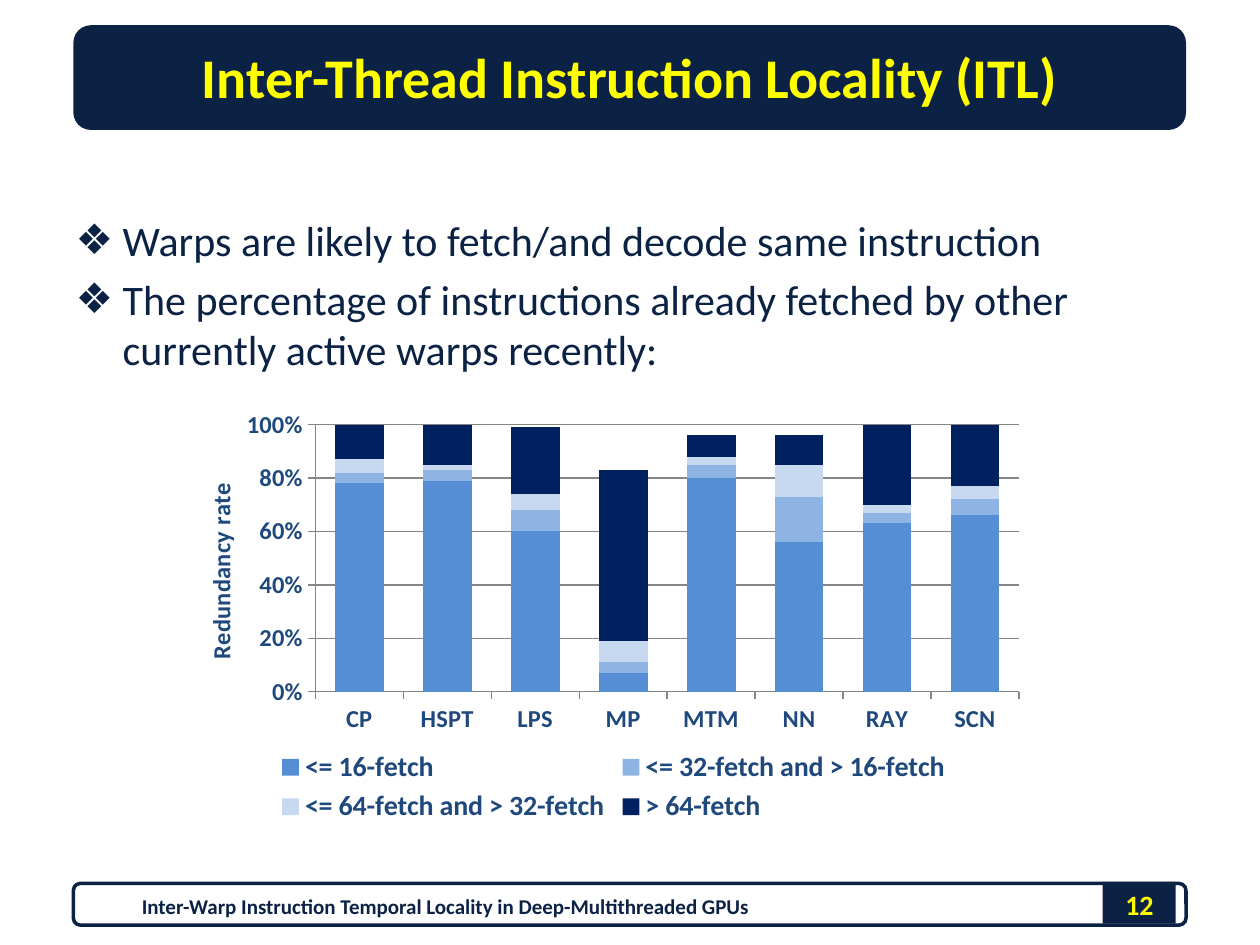
from lxml import etree
from pptx import Presentation
from pptx import util as u
from pptx.chart import data as cd
from pptx.dml import color as col
from pptx.enum import chart as ch
from pptx.enum import shapes, text
from pptx.oxml import ns

NAVY, GOLD, BLUE, GREY = "0B2245", "FFFF00", "1F497D", "868686"
FACE = "Calibri"
MARK = "❖"


def rgb(code):
    return col.RGBColor.from_string(code)


def cm(*sizes):
    return [u.Cm(size) for size in sizes]


def style(font, size, color, bold=False):
    font.name, font.size, font.bold = FACE, u.Pt(size), bold
    font.color.rgb = rgb(color)


def write(frame, words, size=12, color=NAVY, bold=False, align=None,
          anchor=None, mark=None, gap=0):
    """Fill a text frame, one paragraph for each string in words."""
    frame.word_wrap = True
    frame.auto_size = text.MSO_AUTO_SIZE.NONE
    frame.vertical_anchor = anchor
    for i, line in enumerate(words):
        para = frame.paragraphs[0] if i == 0 else frame.add_paragraph()
        para.alignment = align
        para.space_before = u.Pt(gap if i else 0)
        if mark:
            props = para._p.get_or_add_pPr()
            props.set("marL", str(u.Cm(0.95)))
            props.set("indent", str(-u.Cm(0.95)))
            etree.SubElement(props, ns.qn("a:buChar")).set("char", mark)
        run = para.add_run()
        run.text = line
        style(run.font, size, color, bold)


class Deck:
    def __init__(self):
        self.show = Presentation()
        self.show.slide_width, self.show.slide_height = cm(25.4, 19.05)
        self.slide = self.show.slides.add_slide(self.show.slide_layouts[1])
        self.centre = dict(align=text.PP_ALIGN.CENTER,
                           anchor=text.MSO_ANCHOR.MIDDLE, bold=True)

    def panel(self, kind, place, fill=None, line=None):
        """Draw a shape behind the title and body text."""
        box = self.slide.shapes.add_shape(kind, *cm(*place))
        box.shadow.inherit = False
        if fill:
            box.fill.solid()
            box.fill.fore_color.rgb = rgb(fill)
        else:
            box.fill.background()
        if line:
            box.line.color.rgb = rgb(line)
            box.line.width = u.Pt(2)
        else:
            box.line.fill.background()
        self.slide.shapes.title.element.addprevious(box.element)

    def holder(self, index, place, words, **form):
        box = self.slide.placeholders[index]
        box.left, box.top, box.width, box.height = cm(*place)
        write(box.text_frame, words, **form)

    def label(self, place, words, **form):
        box = self.slide.shapes.add_textbox(*cm(*place))
        write(box.text_frame, [words], **self.centre, **form)

    def stack(self, place, cats, rows, title, plot):
        """Add a stacked column chart; rows are (name, colour, values)."""
        data = cd.CategoryChartData(number_format="0%")
        data.categories = cats
        for name, _, vals in rows:
            data.add_series(name, vals)
        chart = self.slide.shapes.add_chart(
            ch.XL_CHART_TYPE.COLUMN_STACKED, *cm(*place), data).chart
        style(chart.font, 14, BLUE)
        chart.has_title = False
        chart.has_legend = True
        chart.legend.position = ch.XL_LEGEND_POSITION.BOTTOM
        chart.legend.include_in_layout = False
        style(chart.legend.font, 16, BLUE, True)

        bars = chart.plots[0]
        bars.gap_width, bars.overlap, bars.vary_by_categories = 80, 100, False
        for bar, (_, color, _) in zip(bars.series, rows):
            bar.format.fill.solid()
            bar.format.fill.fore_color.rgb = rgb(color)

        rate = chart.value_axis
        for axis in (chart.category_axis, rate):
            style(axis.tick_labels.font, 14, BLUE, True)
            axis.format.line.color.rgb = rgb(GREY)
            axis.major_tick_mark = ch.XL_TICK_MARK.OUTSIDE
        rate.minimum_scale, rate.maximum_scale, rate.major_unit = 0, 1, 0.2
        rate.has_major_gridlines = True
        rate.major_gridlines.format.line.color.rgb = rgb(GREY)
        rate.tick_labels.number_format = "0%"
        rate.tick_labels.number_format_is_linked = False
        write(rate.axis_title.text_frame, [title], 14, BLUE, True)
        self.fit(chart, plot)

    def fit(self, chart, plot):
        """Place the inner plot area by fractions of the chart."""
        area = chart.element.find(".//" + ns.qn("c:plotArea"))
        for old in area.findall(ns.qn("c:layout")):
            area.remove(old)
        outer = etree.Element(ns.qn("c:layout"))
        area.insert(0, outer)
        inner = etree.SubElement(outer, ns.qn("c:manualLayout"))
        parts = [("layoutTarget", "inner"), ("xMode", "edge"),
                 ("yMode", "edge"), *zip("xywh", plot)]
        for tag, val in parts:
            etree.SubElement(inner, ns.qn("c:" + tag)).set("val", str(val))


def main():
    deck = Deck()
    rect, round_box = shapes.MSO_SHAPE.RECTANGLE, shapes.MSO_SHAPE.ROUNDED_RECTANGLE
    deck.panel(rect, (22.23, 17.78, 1.47, 0.84), fill=NAVY)
    deck.panel(round_box, (1.48, 17.81, 22.43, 0.84), line=NAVY)
    deck.panel(round_box, (1.48, 0.51, 22.43, 2.11), fill=NAVY)

    deck.holder(0, (1.27, 0.43, 22.86, 2.21),
                ["Inter-Thread Instruction Locality (ITL)"],
                size=32, color=GOLD, **deck.centre)
    deck.holder(1, (1.27, 4.2, 22.86, 3.8), [
        "Warps are likely to fetch/and decode same instruction",
        "The percentage of instructions already fetched by other "
        "currently active warps recently:",
    ], size=24, mark=MARK, gap=4.8)
    deck.label((22.02, 17.73, 1.9, 1.02), "12", size=16, color=GOLD)
    deck.label((1.9, 17.75, 14.17, 1.02),
               "Inter-Warp Instruction Temporal Locality in "
               "Deep-Multithreaded GPUs")

    cats = ["CP", "HSPT", "LPS", "MP", "MTM", "NN", "RAY", "SCN"]
    rows = [
        ("<= 16-fetch", "558ED5",
         [0.78, 0.79, 0.6, 0.07, 0.8, 0.56, 0.63, 0.66]),
        ("<= 32-fetch and > 16-fetch", "8EB4E3",
         [0.04, 0.04, 0.08, 0.04, 0.05, 0.17, 0.04, 0.06]),
        ("<= 64-fetch and > 32-fetch", "C6D9F1",
         [0.05, 0.02, 0.06, 0.08, 0.03, 0.12, 0.03, 0.05]),
        ("> 64-fetch", "002060",
         [0.13, 0.15, 0.25, 0.64, 0.08, 0.11, 0.3, 0.23]),
    ]
    deck.stack((4.02, 8.26, 16.69, 8.46), cats, rows, "Redundancy rate",
               (0.14, 0.03, 0.85, 0.64))
    deck.show.save("out.pptx")


if __name__ == "__main__":
    main()
